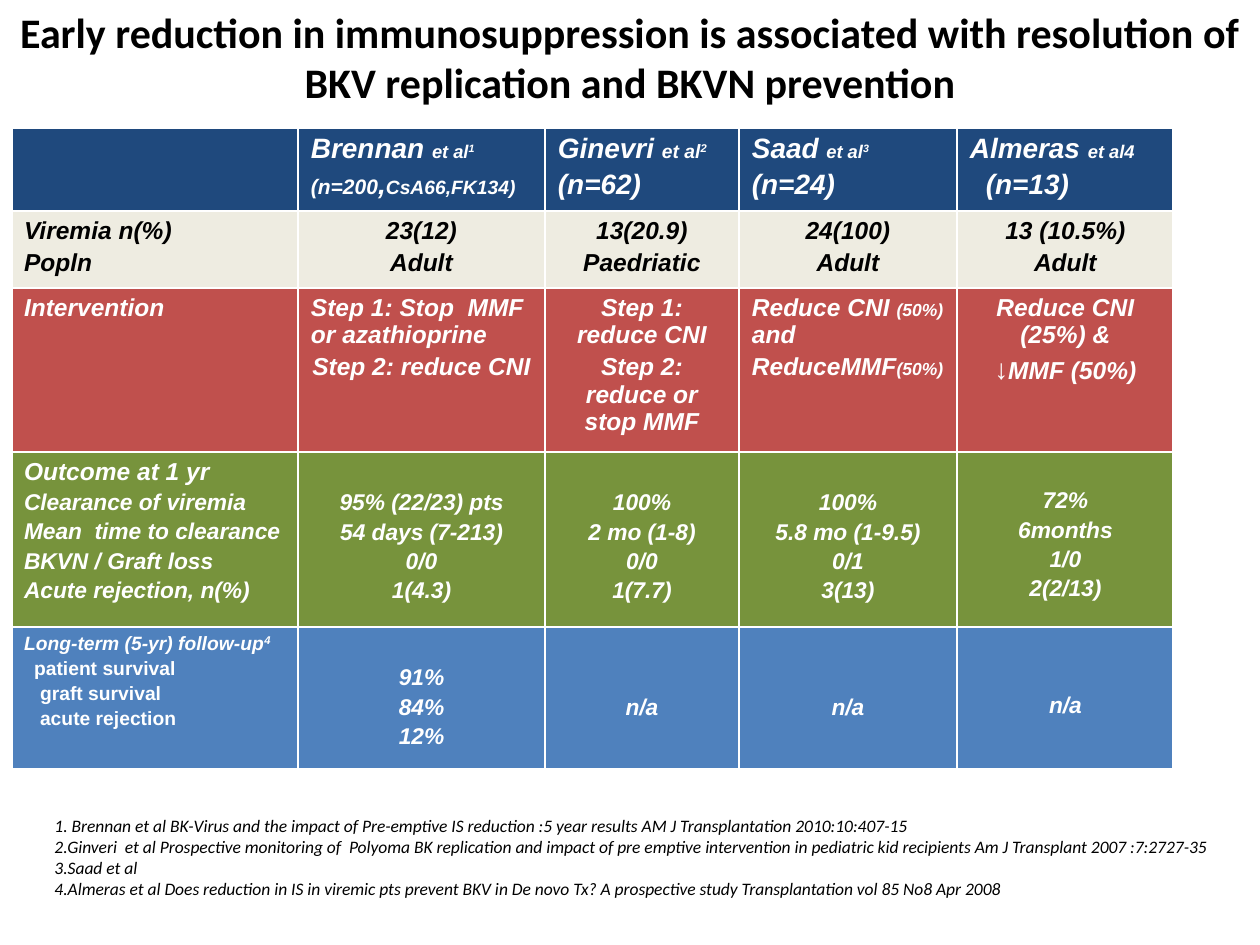
import pptx
import pptx.util
import pptx.dml.color
import pptx.enum.text
import pptx.oxml.ns
import lxml.etree

SCALE = 914400 / 126
RGB = pptx.dml.color.RGBColor
WHITE = RGB(0xFF, 0xFF, 0xFF)
BLACK = RGB(0x00, 0x00, 0x00)
NAVY = RGB(0x1F, 0x49, 0x7D)
CREAM = RGB(0xEE, 0xEC, 0xE1)
RED = RGB(0xC0, 0x50, 0x4D)
GREEN = RGB(0x77, 0x93, 0x3C)
BLUE = RGB(0x4F, 0x81, 0xBD)
LEFT = pptx.enum.text.PP_ALIGN.LEFT
CENTER = pptx.enum.text.PP_ALIGN.CENTER


def px(n):
    return pptx.util.Emu(round(n * SCALE))


def add_run(p, text, size, font, color, bold=False, italic=False):
    r = p.add_run()
    r.text = text
    f = r.font
    f.size, f.name, f.bold, f.italic = pptx.util.Pt(size), font, bold, italic
    f.color.rgb = color
    return r


prs = pptx.Presentation()
prs.slide_width, prs.slide_height = px(1260), px(945)
s = prs.slides.add_slide(prs.slide_layouts[6])

# Title
tf = s.shapes.add_textbox(px(0), px(0), px(1260), px(115)).text_frame
tf.word_wrap = True
p = tf.paragraphs[0]
p.alignment = CENTER
add_run(p, "Early reduction in immunosuppression is associated with resolution of "
           "BKV replication and BKVN prevention", 24, "Calibri", BLACK, bold=True)

# References
references = [
    "1. Brennan et al BK-Virus and the impact of Pre-emptive IS reduction :5 year results "
    "AM J Transplantation 2010:10:407-15",
    "2.Ginveri  et al Prospective monitoring of  Polyoma BK replication and impact of pre emptive "
    "intervention in pediatric kid recipients Am J Transplant 2007 :7:2727-35",
    "3.Saad et al",
    "4.Almeras et al Does reduction in IS in viremic pts prevent BKV in De novo Tx? "
    "A prospective study Transplantation vol 85 No8 Apr 2008",
]
tf = s.shapes.add_textbox(px(42), px(809), px(1193), px(97)).text_frame
tf.word_wrap = False
for i, reference in enumerate(references):
    p = tf.add_paragraph() if i else tf.paragraphs[0]
    add_run(p, reference, 10, "Calibri", BLACK, italic=True)

# Table rows: fill, text colour, default size, cells.
# A cell is (alignment, top margin, paragraphs); a paragraph is a string or a list of
# (text, size) runs. "^" starts a superscript, ">" indents by 16 px, "/" by 10 px upright.
rows = [
    (NAVY, WHITE, 16, [
        (LEFT, 6, []),
        (LEFT, 6, [[("Brennan ", 16), ("et al", 10.5), ("^1", 10.5)],
                   [("(n=200", 12), (",", 16), ("CsA66,FK134)", 11)]]),
        (LEFT, 6, [[("Ginevri ", 16), ("et al", 11), ("^2", 11)], "(n=62)"]),
        (LEFT, 6, [[("Saad ", 16), ("et al", 10.5), ("^3", 10.5)], "(n=24)"]),
        (LEFT, 6, [[("Almeras ", 16), ("et al4", 10.5)], ">(n=13)"]),
    ]),
    (CREAM, BLACK, 14, [
        (LEFT, 6, ["Viremia n(%)", "Popln"]),
        (CENTER, 6, ["23(12)", "Adult"]),
        (CENTER, 6, ["13(20.9)", "Paedriatic"]),
        (CENTER, 6, ["24(100)", "Adult"]),
        (CENTER, 6, ["13 (10.5%)", "Adult"]),
    ]),
    (RED, WHITE, 14, [
        (LEFT, 6, ["Intervention"]),
        (LEFT, 6, ["Step 1: Stop  MMF or azathioprine", "Step 2: reduce CNI"]),
        (CENTER, 6, ["Step 1: reduce CNI", "Step 2: reduce or stop MMF"]),
        (LEFT, 6, [[("Reduce CNI ", 14), ("(50%)", 10), (" and", 14)],
                   [("ReduceMMF", 14), ("(50%)", 10)]]),
        (CENTER, 6, ["Reduce CNI (25%) &", [("↓", 16), ("MMF (50%)", 14)]]),
    ]),
    (GREEN, WHITE, 13, [
        (LEFT, 6, [[("Outcome at 1 yr", 14)], "Clearance of viremia", "Mean  time to clearance",
                   "BKVN / Graft loss", "Acute rejection, n(%)"]),
        (CENTER, 38, ["95% (22/23) pts", "54 days (7-213)", "0/0", "1(4.3)"]),
        (CENTER, 38, ["100%", "2 mo (1-8)", "0/0", "1(7.7)"]),
        (CENTER, 38, ["100%", "5.8 mo (1-9.5)", "0/1", "3(13)"]),
        (CENTER, 36, ["72%", "6months", "1/0", "2(2/13)"]),
    ]),
    (BLUE, WHITE, 13, [
        (LEFT, 6, [[("Long-term (5-yr) follow-up", 11), ("^4", 11)], [("/patient survival", 11)],
                   [("/>graft survival", 11)], [("/>acute rejection", 11)]]),
        (CENTER, 38, ["91%", "84%", "12%"]),
        (CENTER, 68, ["n/a"]),
        (CENTER, 68, ["n/a"]),
        (CENTER, 66, ["n/a"]),
    ]),
]
col_widths = [287, 247, 194, 218, 217]
row_heights = [84, 77, 164, 175, 143]

frame = s.shapes.add_table(len(rows), len(col_widths), px(11), px(127),
                           px(sum(col_widths)), px(sum(row_heights)))
table = frame.table
table.first_row = table.horz_banding = False
for col, width in zip(table.columns, col_widths):
    col.width = px(width)
for row, height in zip(table.rows, row_heights):
    row.height = px(height)

last_row, last_col = len(rows) - 1, len(col_widths) - 1
qn = pptx.oxml.ns.qn
for i, (fill, color, default_size, cells) in enumerate(rows):
    for j, (align, top, paragraphs) in enumerate(cells):
        cell = table.cell(i, j)
        cell.margin_left = cell.margin_right = px(13)
        cell.margin_top, cell.margin_bottom = px(top), px(6)

        tcPr = cell._tc.get_or_add_tcPr()
        outer = {"L": j == 0, "R": j == last_col, "T": i == 0, "B": i == last_row}
        for side, is_outer in outer.items():
            width = pptx.util.Pt(2.25 if is_outer else 1)
            ln = lxml.etree.SubElement(tcPr, qn("a:ln" + side), w=str(width))
            solid = lxml.etree.SubElement(ln, qn("a:solidFill"))
            lxml.etree.SubElement(solid, qn("a:srgbClr"), val=str(WHITE))
        cell.fill.solid()
        cell.fill.fore_color.rgb = fill

        tf = cell.text_frame
        for k, runs in enumerate(paragraphs):
            p = tf.add_paragraph() if k else tf.paragraphs[0]
            # Only the last cell of the first row starts its second line indented
            p.alignment = CENTER if runs == "Step 2: reduce CNI" else align
            if isinstance(runs, str):
                runs = [(runs, default_size)]
            p.space_before = pptx.util.Pt(round(0.18 * max(size for _, size in runs), 1))
            first = runs[0][0]
            upright = first.startswith("/")
            indent = 16 if ">" in first else 10 if upright else 0
            if indent:
                p._p.get_or_add_pPr().set("marL", str(px(indent)))
            for text, size in runs:
                r = add_run(p, text.lstrip("/>^"), size, "Arial", color, True, not upright)
                if text.startswith("^"):
                    r.font._element.set("baseline", "30000")

prs.save("out.pptx")
